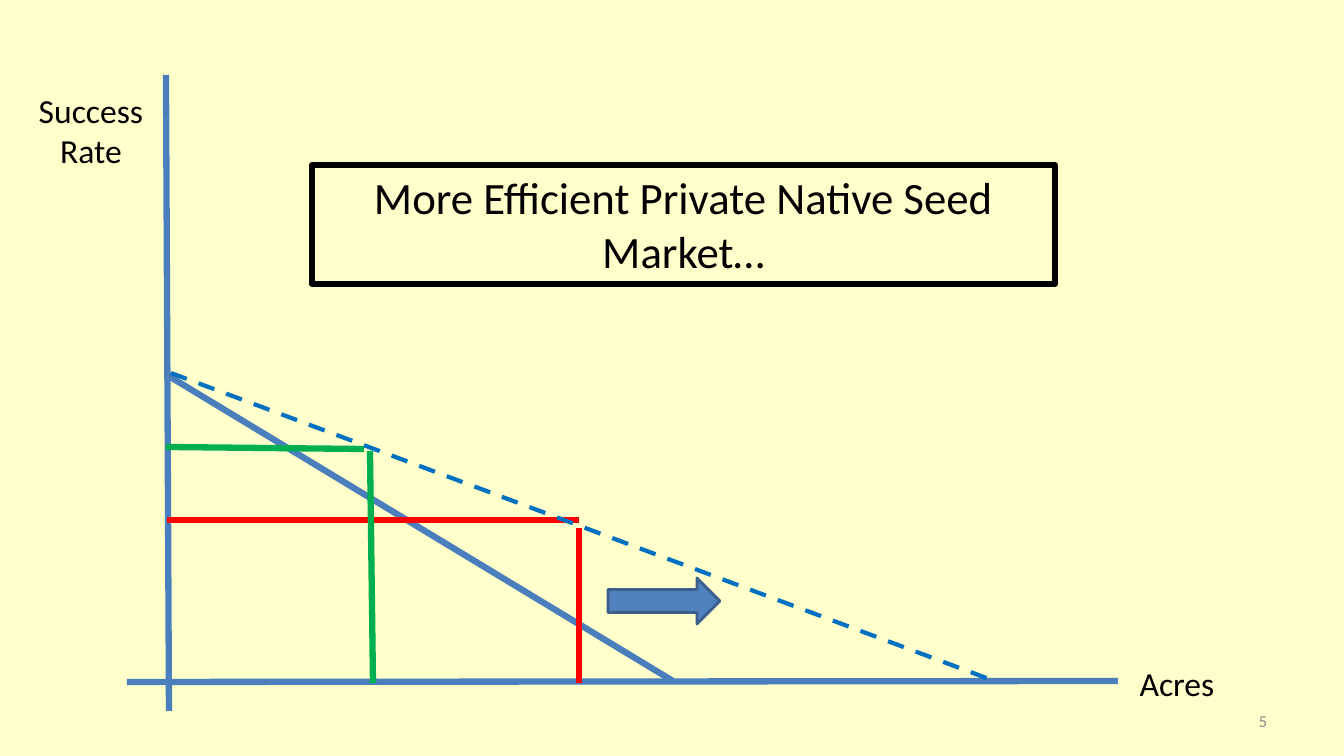
from collections import namedtuple

from lxml import etree
from pptx import Presentation
from pptx.dml.color import RGBColor
from pptx.enum.dml import MSO_LINE
from pptx.enum.shapes import MSO_CONNECTOR, MSO_SHAPE
from pptx.enum.text import MSO_ANCHOR, MSO_AUTO_SIZE, PP_ALIGN
from pptx.oxml.ns import qn
from pptx.util import Emu, Pt

EMU_PER_PX = 914400 / 100.8
FONT = "Calibri"
CREAM = RGBColor(0xFF, 0xFF, 0xCC)
BLACK = RGBColor(0x00, 0x00, 0x00)
GRAY = RGBColor(0x8C, 0x8C, 0x8C)
AXIS_BLUE = RGBColor(0x4B, 0x7E, 0xBC)
ARROW_BLUE = RGBColor(0x4F, 0x81, 0xBD)
ARROW_EDGE = RGBColor(0x3A, 0x5F, 0x8C)
SHIFT_BLUE = RGBColor(0x00, 0x70, 0xC0)
RED = RGBColor(0xFF, 0x00, 0x00)
GREEN = RGBColor(0x00, 0xB0, 0x50)

Box = namedtuple("Box", "left top width height")


def px(length):
    return Emu(round(length * EMU_PER_PX))


def write_text(shape, text, size, color=BLACK, align=PP_ALIGN.CENTER, anchor=MSO_ANCHOR.TOP):
    frame = shape.text_frame
    frame.text = text
    frame.word_wrap = True
    frame.auto_size = MSO_AUTO_SIZE.NONE
    frame.vertical_anchor = anchor
    paragraph = frame.paragraphs[0]
    paragraph.alignment = align
    font = paragraph.runs[0].font
    font.name = FONT
    font.size = Pt(size)
    font.color.rgb = color


def add_label(slide, box, text, size, **style):
    label = slide.shapes.add_textbox(*map(px, box))
    write_text(label, text, size, **style)


def add_line(slide, box, start, end, color, width=4.5, dash=None):
    connector = slide.shapes.add_connector(
        MSO_CONNECTOR.STRAIGHT,
        px(box.left + start[0]), px(box.top + start[1]),
        px(box.left + end[0]), px(box.top + end[1]),
    )
    connector.line.color.rgb = color
    connector.line.width = Pt(width)
    if dash:
        connector.line.dash_style = dash
    etree.SubElement(connector._element.spPr, qn("a:effectLst"))


def add_title(slide, box):
    title = slide.shapes.title
    title.left, title.top, title.width, title.height = map(px, box)
    title.line.color.rgb = BLACK
    title.line.width = Pt(4.5)
    write_text(title, "More Efficient Private Native Seed Market…", 32)


def add_axes(slide, box):
    add_line(slide, box, (39, 0), (42, box.height), AXIS_BLUE)
    add_line(slide, box, (0, 607), (box.width, 606), AXIS_BLUE)
    add_label(slide, Box(box.left - 106, box.top + 10, 140, 92), "Success Rate", 24)
    add_label(slide, Box(box.left + box.width - 11, box.top + 583, 140, 50), "Acres", 24)


def add_curves(slide, box):
    lines = [
        ((40, 300), (546, 606), AXIS_BLUE),
        ((40, 445), (452, 445), RED),
        ((452, 453), (452, 608), RED),
        ((39, 372), (237, 374), GREEN),
        ((243, 376), (246, 608), GREEN),
    ]
    for start, end, color in lines:
        add_line(slide, box, start, end, color)
    add_line(slide, box, (44, 298), (862, 604), SHIFT_BLUE, 3, MSO_LINE.DASH)


def add_shift_arrow(slide, box):
    arrow = slide.shapes.add_shape(MSO_SHAPE.RIGHT_ARROW, *map(px, box))
    arrow.shadow.inherit = False
    arrow.fill.solid()
    arrow.fill.fore_color.rgb = ARROW_BLUE
    arrow.line.color.rgb = ARROW_EDGE
    arrow.line.width = Pt(2)


def main():
    presentation = Presentation()
    presentation.slide_width = px(1344)
    presentation.slide_height = px(756)
    slide = presentation.slides.add_slide(presentation.slide_layouts.get_by_name("Title Only"))
    slide.background.fill.solid()
    slide.background.fill.fore_color.rgb = CREAM

    diagram = Box(127, 75, 991, 636)
    add_label(slide, Box(964, 701, 313, 40), "5", 12,
              color=GRAY, align=PP_ALIGN.RIGHT, anchor=MSO_ANCHOR.MIDDLE)
    add_axes(slide, diagram)
    add_curves(slide, diagram)
    add_shift_arrow(slide, Box(diagram.left + 481, diagram.top + 503, 112, 46))
    add_title(slide, Box(312, 165, 743, 119))
    presentation.save("out.pptx")


if __name__ == "__main__":
    main()
